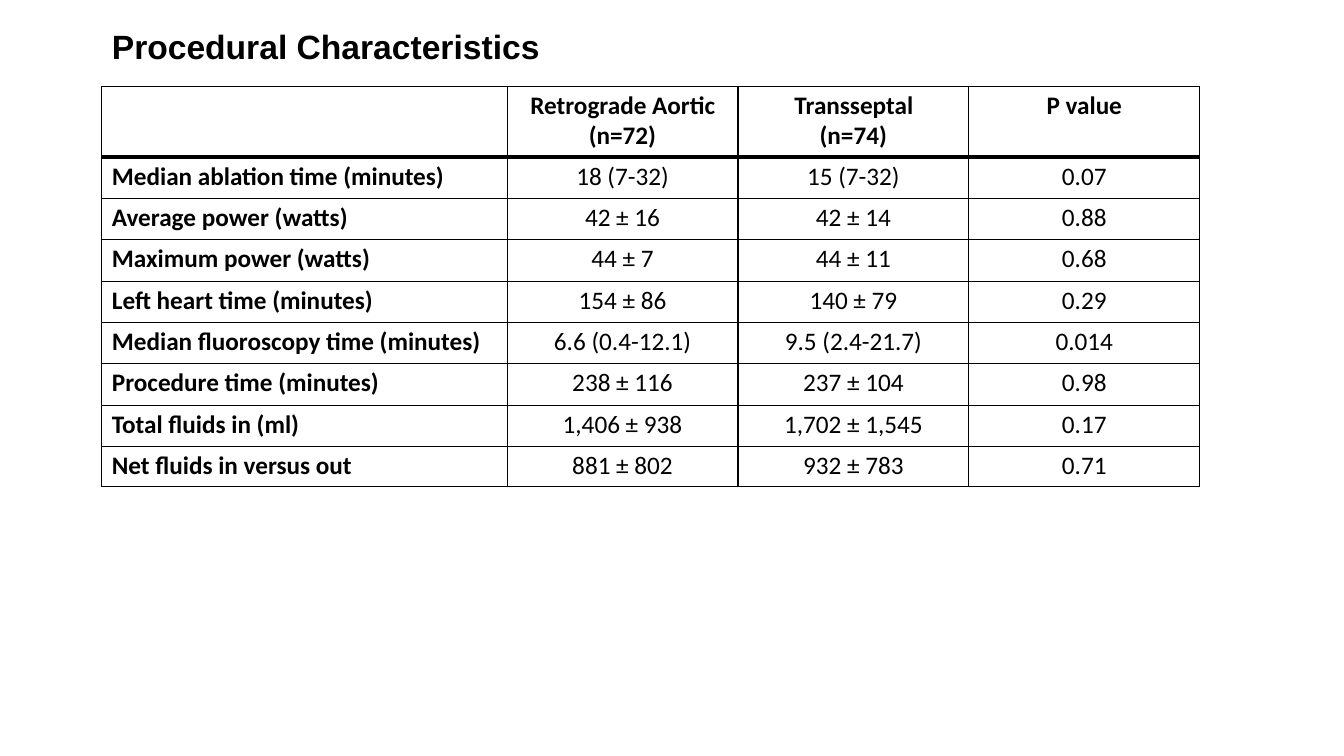
from dataclasses import dataclass
from typing import Any

from lxml import etree
from pptx import Presentation
from pptx import util as u
from pptx.dml.color import RGBColor
from pptx.enum import text as t
from pptx.oxml import ns

PX = 9144  # EMU per px, 100 px to the inch
INK = "000000"
THIN, THICK = 1, 3
COLS = [402, 229, 229, 229]
ROWS = [70] + [41] * 7 + [40]
DATA = [
    ("Median ablation time (minutes)", "18 (7-32)", "15 (7-32)", "0.07"),
    ("Average power (watts)", "42 ± 16", "42 ± 14", "0.88"),
    ("Maximum power (watts)", "44 ± 7", "44 ± 11", "0.68"),
    ("Left heart time (minutes)", "154 ± 86", "140 ± 79", "0.29"),
    ("Median fluoroscopy time (minutes)", "6.6 (0.4-12.1)", "9.5 (2.4-21.7)", "0.014"),
    ("Procedure time (minutes)", "238 ± 116", "237 ± 104", "0.98"),
    ("Total fluids in (ml)", "1,406 ± 938", "1,702 ± 1,545", "0.17"),
    ("Net fluids in versus out", "881 ± 802", "932 ± 783", "0.71"),
]


@dataclass
class Entry:
    words: str
    bold: bool = False
    size: int = 18
    face: str = "Calibri"
    left: int = 0    # indent of the paragraph, px
    first: int = 0   # extra indent of its first line, px
    top: int = 4     # inset above the text, px
    before: float = 2.5
    lead: float | None = None
    mid: bool = False


def px(n: int) -> int:
    return u.Emu(n * PX)


def ink(code: str) -> RGBColor:
    return RGBColor.from_string(code)


def assign(obj: Any, form: dict[str, Any]) -> None:
    for key, val in form.items():
        setattr(obj, key, val)


def write(frame: Any, item: Entry) -> None:
    par = frame.paragraphs[0]
    assign(par, {
        "alignment": t.PP_ALIGN.CENTER if item.mid else t.PP_ALIGN.LEFT,
        "space_before": u.Pt(item.before),
        "line_spacing": u.Pt(item.lead) if item.lead else None,
    })
    props = par._p.get_or_add_pPr()
    props.set("marL", str(px(item.left)))
    props.set("indent", str(px(item.first)))
    run = par.add_run()
    run.text = item.words
    assign(run.font, {"name": item.face, "size": u.Pt(item.size), "bold": item.bold})
    run.font.color.rgb = ink(INK)


def edge(cell: Any, side: str, width: int) -> None:
    props = cell._tc.get_or_add_tcPr()
    line = etree.SubElement(props, ns.qn(f"a:ln{side}"), w=str(u.Pt(width)))
    fill = etree.SubElement(line, ns.qn("a:solidFill"))
    etree.SubElement(fill, ns.qn("a:srgbClr"), val=INK)


def grid() -> list[list[Entry]]:
    head = [
        Entry(""),
        Entry("Retrograde Aortic (n=72)", True, left=81, first=-58, top=5, before=3.6, lead=21.1),
        Entry("Transseptal (n=74)", True, left=81, first=-25, top=5, before=3.6, lead=21.1),
        Entry("P value", True, mid=True),
    ]
    body = [[Entry(name, True, left=10)] + [Entry(val, mid=True) for val in vals]
            for name, *vals in DATA]
    return [head] + body


def draw_table(slide: Any) -> None:
    frame = slide.shapes.add_table(len(ROWS), len(COLS), px(101), px(86),
                                   px(sum(COLS)), px(sum(ROWS)))
    table = frame.table
    assign(table, {"first_row": False, "horz_banding": False})
    for col, width in zip(table.columns, COLS):
        col.width = px(width)
    for row, height in zip(table.rows, ROWS):
        row.height = px(height)
    for r, line in enumerate(grid()):
        for c, item in enumerate(line):
            cell = table.cell(r, c)
            assign(cell, {"margin_left": 0, "margin_right": 0,
                          "margin_top": px(item.top), "margin_bottom": 0})
            # Heavy rule below the header row
            for side in "LRTB":
                heavy = (r, side) in ((0, "B"), (1, "T"))
                edge(cell, side, THICK if heavy else THIN)
            cell.fill.background()
            if item.words:
                write(cell.text_frame, item)


def draw_title(slide: Any) -> None:
    frame = slide.shapes.add_textbox(px(110), px(25), px(440), px(43)).text_frame
    assign(frame, {"word_wrap": True, "margin_left": 0, "margin_right": 0,
                   "margin_top": px(1), "margin_bottom": 0})
    write(frame, Entry("Procedural Characteristics", True, 24, "Arial", left=1, before=1))


def main() -> None:
    deck = Presentation()
    assign(deck, {"slide_width": px(1333), "slide_height": px(750)})
    slide = deck.slides.add_slide(deck.slide_layouts[6])
    draw_table(slide)
    draw_title(slide)
    deck.save("out.pptx")


if __name__ == "__main__":
    main()
